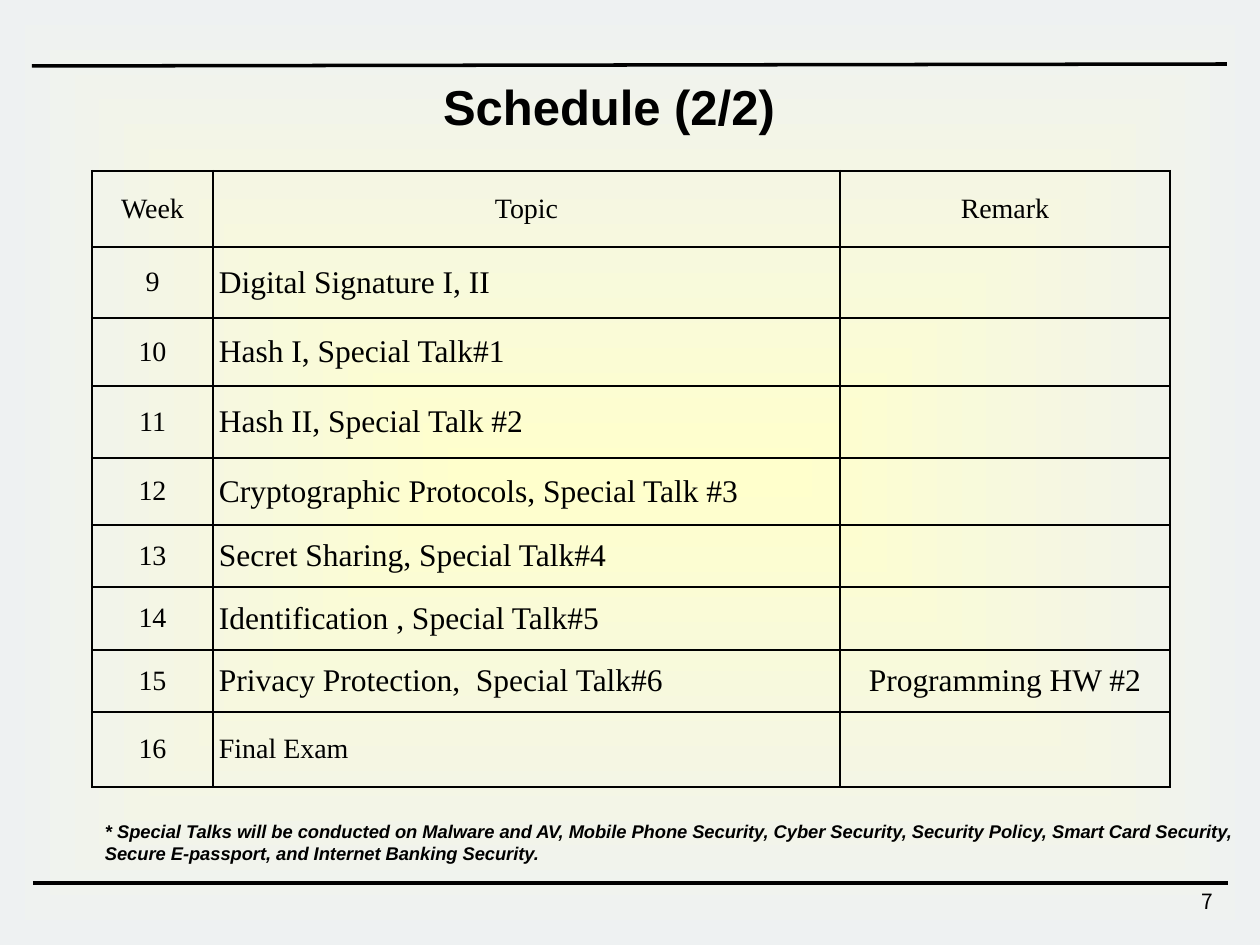
import pptx
import pptx.util
import pptx.dml.color
import pptx.enum.shapes
import pptx.enum.text
import pptx.oxml
import pptx.oxml.ns
from lxml import etree

# Content
TITLE = "Schedule (2/2)"
HEAD = ("Week", "Topic", "Remark")
WEEKS = [
    ("9", "Digital Signature I, II", ""),
    ("10", "Hash I, Special Talk#1", ""),
    ("11", "Hash II, Special Talk #2", ""),
    ("12", "Cryptographic Protocols, Special Talk #3", ""),
    ("13", "Secret Sharing, Special Talk#4", ""),
    ("14", "Identification , Special Talk#5", ""),
    ("15", "Privacy Protection,  Special Talk#6", "Programming HW #2"),
    ("16", "Final Exam", ""),
]
NOTE = (
    "* Special Talks will be conducted on Malware and AV, Mobile Phone Security, "
    "Cyber Security, Security Policy, Smart Card Security,",
    "Secure E-passport, and Internet Banking Security.",
)
PAGE = "7"

# Layout in px
SIZE = (1260, 945)
RULES = [(32, 66, 1227, 64), (33, 883, 1228, 883)]
GRID = (92, 171)
COLS = (121, 627, 330)
ROWS = (76, 71, 68, 72, 67, 62, 63, 62, 75)


class Theme:
    ink = "000000"
    core, rim = "FFFFCC", "EEF1F2"
    sans, serif, num = "Arial", "Times New Roman", "Noto Sans CJK KR"
    title, body, small, note, page = 28, 18, 16, 10.5, 12
    rule, outer, inner = 2, 1.5, 1


ALIGN = pptx.enum.text.PP_ALIGN
TOP = pptx.enum.text.MSO_ANCHOR.TOP
MID = pptx.enum.text.MSO_ANCHOR.MIDDLE
qn = pptx.oxml.ns.qn


def px(n):
    return pptx.util.Emu(n * 914400 // 126)


def rgb(code):
    return pptx.dml.color.RGBColor.from_string(code)


def place(shape, *box):
    shape.left, shape.top, shape.width, shape.height = map(px, box)


def write(para, text, font, size, align, bold=False, slant=False):
    para.alignment = align
    run = para.add_run()
    run.text = text
    run.font.name, run.font.size = font, pptx.util.Pt(size)
    run.font.bold, run.font.italic = bold, slant
    run.font.color.rgb = rgb(Theme.ink)


def inset(frame, side, edge):
    frame.margin_left = frame.margin_right = px(side)
    frame.margin_top = frame.margin_bottom = px(edge)


def box(slide, *area, wrap=True):
    frame = slide.shapes.add_textbox(*map(px, area)).text_frame
    frame.word_wrap = wrap
    inset(frame, 13, 6)
    return frame


def border(cell, widths):
    """Line the cell; widths run left, right, top, bottom."""
    props = cell._tc.get_or_add_tcPr()
    for i, (side, width) in enumerate(zip("LRTB", widths)):
        line = etree.Element(qn("a:ln" + side), w=str(pptx.util.Pt(width)))
        fill = etree.SubElement(line, qn("a:solidFill"))
        etree.SubElement(fill, qn("a:srgbClr"), val=Theme.ink)
        props.insert(i, line)


def backdrop(slide):
    rect = slide.shapes.add_shape(
        pptx.enum.shapes.MSO_SHAPE.RECTANGLE, 0, 0, *map(px, SIZE))
    rect.shadow.inherit = False
    rect.line.fill.background()
    rect.fill.gradient()
    for stop, code in zip(rect.fill.gradient_stops, (Theme.core, Theme.rim)):
        stop.color.rgb = rgb(code)
    # Spread the gradient from the centre
    grad = rect._element.spPr.find(qn("a:gradFill"))
    grad.remove(grad.find(qn("a:lin")))
    spread = etree.SubElement(grad, qn("a:path"))
    spread.set("path", "shape")
    etree.SubElement(spread, qn("a:fillToRect"),
                     l="50000", t="50000", r="50000", b="50000")
    slide.shapes._spTree.insert(2, rect._element)


def rule(slide, ends):
    line = slide.shapes.add_connector(
        pptx.enum.shapes.MSO_CONNECTOR.STRAIGHT, *map(px, ends))
    line.line.color.rgb = rgb(Theme.ink)
    line.line.width = pptx.util.Pt(Theme.rule)
    etree.SubElement(line._element.spPr, qn("a:effectLst"))


def schedule(slide):
    rows = [HEAD] + WEEKS
    table = slide.shapes.add_table(
        len(rows), len(COLS), *map(px, GRID + (sum(COLS), sum(ROWS)))).table
    table.first_row = table.horz_banding = False
    for col, width in zip(table.columns, COLS):
        col.width = px(width)
    for row, height in zip(table.rows, ROWS):
        row.height = px(height)
    last, end = len(rows) - 1, len(COLS) - 1
    for r, row in enumerate(rows):
        for c, text in enumerate(row):
            cell = table.cell(r, c)
            cell.fill.background()
            cell.vertical_anchor = MID
            inset(cell, 6, 0)
            edges = (c == 0, c == end, r == 0, r == last)
            border(cell, [Theme.outer if e else Theme.inner for e in edges])
            if text:
                small = c == 0 or r in (0, last)
                write(cell.text_frame.paragraphs[0], text, Theme.serif,
                      Theme.small if small else Theme.body,
                      ALIGN.JUSTIFY if c == 1 and r else ALIGN.CENTER)


def main():
    deck = pptx.Presentation()
    deck.slide_width, deck.slide_height = map(px, SIZE)
    slide = deck.slides.add_slide(deck.slide_layouts[5])

    # Background and rules
    backdrop(slide)
    for ends in RULES:
        rule(slide, ends)

    # Title
    title = slide.shapes.title
    place(title, -21, 78, 1260, 97)
    frame = title.text_frame
    frame.vertical_anchor = TOP
    inset(frame, 11, 5)
    para = frame.paragraphs[0]
    para.line_spacing = 0.9
    write(para, TITLE, Theme.sans, Theme.title, ALIGN.CENTER, bold=True)

    schedule(slide)

    # Note and page number
    frame = box(slide, 92, 814, 1183, 57, wrap=False)
    for i, text in enumerate(NOTE):
        para = frame.add_paragraph() if i else frame.paragraphs[0]
        write(para, text, Theme.sans, Theme.note, ALIGN.LEFT, True, True)
    frame = box(slide, 964, 883, 262, 42)
    write(frame.paragraphs[0], PAGE, Theme.num, Theme.page, ALIGN.RIGHT)

    deck.save("out.pptx")


if __name__ == "__main__":
    main()
